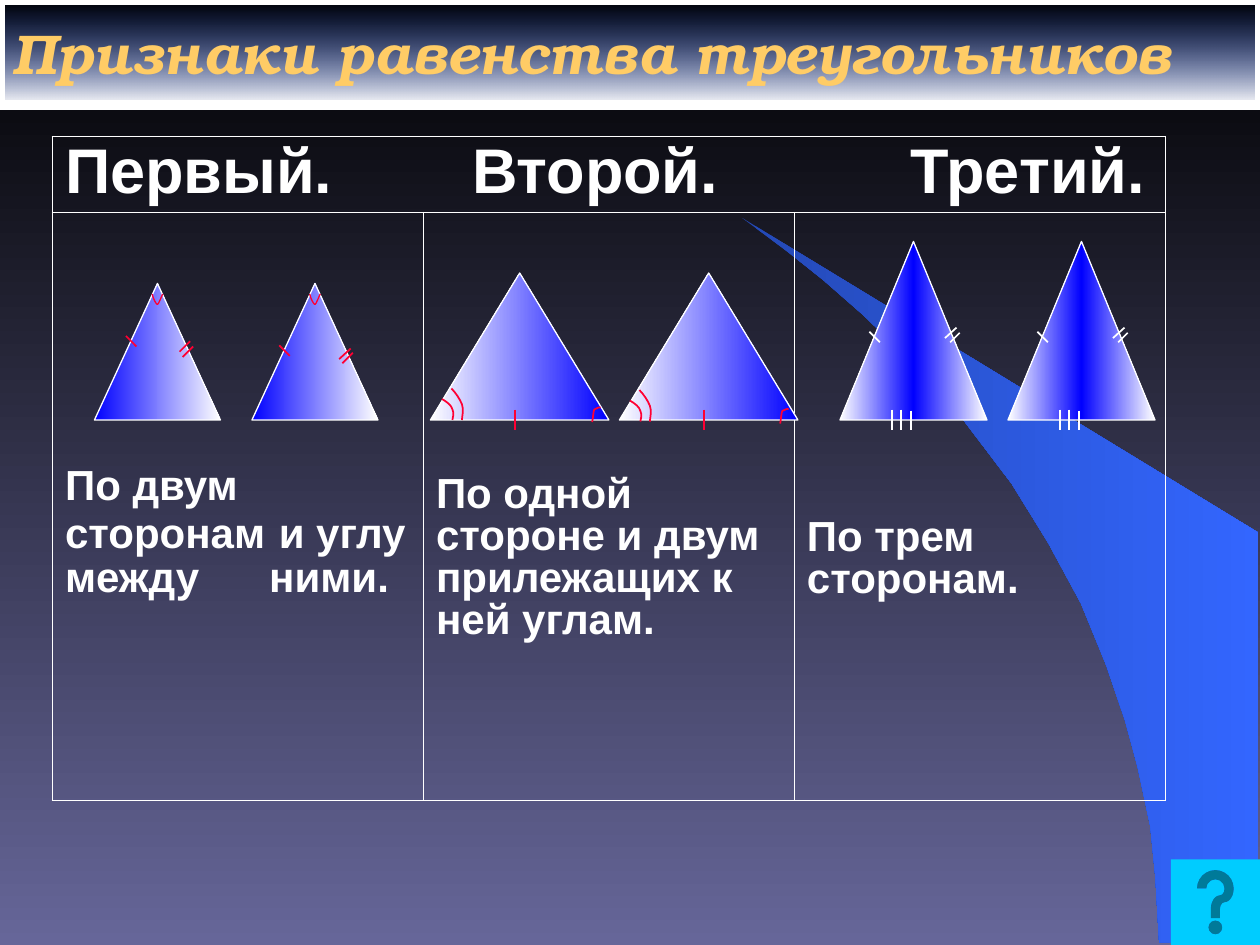
from dataclasses import dataclass

from lxml.etree import SubElement
from pptx import Presentation
from pptx.dml.color import RGBColor
from pptx.enum.shapes import MSO_CONNECTOR, MSO_SHAPE
from pptx.enum.text import MSO_ANCHOR, MSO_AUTO_SIZE, PP_ALIGN
from pptx.oxml.ns import qn
from pptx.util import Inches, Pt


@dataclass(frozen=True)
class Theme:
    white: str = "FFFFFF"
    night: str = "000000"
    dusk: str = "666699"
    gold: str = "FFCC66"
    blue: str = "0000FF"
    red: str = "FF0033"
    sweep_dark: str = "2449B6"
    sweep: str = "3366FF"
    button: str = "00CCFF"
    title_font: str = "TeX Gyre Bonum"
    body_font: str = "Arial"
    title_size: int = 32
    head_size: int = 36
    body_size: int = 24
    gap_size: int = 28


theme = Theme()
rgb = RGBColor.from_string

prs = Presentation()
prs.slide_width, prs.slide_height = Inches(10), Inches(7.5)
slide = prs.slides.add_slide(prs.slide_layouts[5])
shapes = slide.shapes

# The slide is a grid of 120 columns by 90 rows
unit = prs.slide_width / 120


def grid(*cells):
    return [round(cell * unit) for cell in cells]


def paint_gradient(fill, element, stops, angle=0):
    """Stops are (percent, colour) or (percent, colour, opacity percent)."""
    fill.gradient()
    fill.gradient_angle = angle
    stop_list = next(element.iter(qn("a:gsLst")))
    for old_stop in list(stop_list):
        stop_list.remove(old_stop)
    for percent, colour, *opacity in stops:
        stop = SubElement(stop_list, qn("a:gs"), pos=str(percent * 1000))
        tint = SubElement(stop, qn("a:srgbClr"), val=colour)
        for share in opacity:
            SubElement(tint, qn("a:alpha"), val=str(share * 1000))


# Background
paint_gradient(slide.background.fill, slide.element,
               [(0, theme.night), (100, theme.dusk)], angle=270)

# Title band
title = shapes.title
title.left, title.top, title.width, title.height = grid(0, 0, 120, 10)
paint_gradient(title.fill, title.element,
               [(0, theme.sweep, 0), (100, theme.white)], angle=270)
title.line.color.rgb = rgb(theme.white)
title.line.width = Pt(6)
frame = title.text_frame
frame.word_wrap = True
frame.auto_size = MSO_AUTO_SIZE.NONE
frame.vertical_anchor = MSO_ANCHOR.MIDDLE
frame.paragraphs[0].alignment = PP_ALIGN.LEFT
heading = frame.paragraphs[0].add_run()
heading.text = "Признаки равенства треугольников"
heading.font.name = theme.title_font
heading.font.size = Pt(theme.title_size)
heading.font.bold = heading.font.italic = True
heading.font.color.rgb = rgb(theme.gold)

# Blue sweep on the right, in inches
sweep_edge = [(9.99, 7.49), (9.99, 4.23), (5.89, 1.73), (6.24, 1.99), (6.53, 2.22),
              (6.85, 2.5), (7.16, 2.8), (7.62, 3.3), (8.03, 3.84), (8.32, 4.31),
              (8.58, 4.79), (8.78, 5.28), (8.93, 5.72), (9.03, 6.09), (9.13, 6.56),
              (9.17, 6.96)]
outline = shapes.build_freeform(Inches(9.2), Inches(7.48))
outline.add_line_segments([(Inches(x), Inches(y)) for x, y in sweep_edge], close=True)
sweep = outline.convert_to_shape()
sweep.shadow.inherit = False
sweep.line.fill.background()
paint_gradient(sweep.fill, sweep.element, [(0, theme.sweep_dark), (100, theme.sweep)])

# Table of the three criteria
table = shapes.add_table(2, 3, *grid(5, 13, 106, 63.2)).table
table.first_row = table.horz_banding = False
table.rows[0].height, table.rows[1].height = grid(7.2, 56)
for column in table.columns:
    column.width = round(106 * unit / 3)
table.cell(0, 0).merge(table.cell(0, 2))

# Per cell: row, column, top margin (inches), tab stops (inches), runs
body = theme.body_size
criteria = [
    (0, 0, 0.05, [3.23, 6.71], [("Первый.\tВторой.\tТретий.", theme.head_size)]),
    (1, 0, 2.02, [1.62], [("По двум сторонам", body), (" ", theme.gap_size),
                          ("и углу между\tними.", body)]),
    (1, 1, 2.08, [], [("По одной стороне и двум прилежащих к ней углам.", body)]),
    (1, 2, 2.42, [], [("По трем сторонам.", body)]),
]
for row, column, top_margin, tab_stops, runs in criteria:
    cell = table.cell(row, column)
    cell.margin_top = Inches(top_margin)
    cell.vertical_anchor = MSO_ANCHOR.TOP
    paragraph = cell.text_frame.paragraphs[0]
    paragraph.line_spacing = 0.9
    if tab_stops:
        tab_list = SubElement(paragraph._p.get_or_add_pPr(), qn("a:tabLst"))
        for stop in tab_stops:
            SubElement(tab_list, qn("a:tab"), pos=str(Inches(stop)), algn="l")
    for words, size in runs:
        run = paragraph.add_run()
        run.text = words
        run.font.name = theme.body_font
        run.font.size = Pt(size)
        run.font.bold = True
        run.font.color.rgb = rgb(theme.white)

# Thin white cell borders, no cell fill
for cell in table.iter_cells():
    cell.fill.background()
    properties = cell._tc.get_or_add_tcPr()
    for place, side in enumerate(("lnL", "lnR", "lnT", "lnB")):
        border = SubElement(properties, qn(f"a:{side}"), w=str(Pt(1)))
        SubElement(SubElement(border, qn("a:solidFill")), qn("a:srgbClr"), val=theme.white)
        properties.insert(place, border)

# Marks are in grid units from the triangle's top left corner;
# ticks are (x1, y1, x2, y2), arcs are the points of two joined Bezier curves
vertex_arc = [(5.5, 1), (5.6, 1.5), (5.9, 2), (6, 2), (6.1, 2), (6.4, 1.2), (6.5, 1)]
left_inner = [(1.1, 12), (1.6, 12.3), (2, 12.6), (2.1, 13), (2.3, 13.4), (2.1, 13.8), (2.1, 14)]
left_outer = [(2, 11), (2.4, 11.4), (2.8, 12), (3, 12.5), (3.2, 13), (3, 13.7), (3, 14)]
right_arc = [(15.4, 14.2), (15.5, 13.7), (15.5, 13.2), (15.6, 13), (15.8, 12.8),
             (16.2, 12.8), (16.2, 12.8)]
base_arcs = [left_inner, left_outer, right_arc]
base_tick = [(8.03, 13, 8.03, 15)]
three_sides = [(4.96, 16, 4.96, 18), (5.82, 16, 5.82, 18), (6.78, 16.1, 6.78, 18),
               (2.8, 8.6, 3.8, 9.6), (10, 9.2, 11.1, 8.2), (10.5, 9.6, 11.4, 8.7)]
to_white = [(0, theme.blue), (100, theme.white)]
to_blue = [(0, theme.white), (100, theme.blue)]
blue_middle = [(0, theme.white), (50, theme.blue), (100, theme.white)]

# Per triangle: box, gradient, mark colour, ticks, arcs, arc shift, arc width
triangles = [
    ((9, 27, 12, 13), to_white, theme.red,
     [(3, 5, 4, 6), (9.1, 5.5, 8.1, 6.5), (9.4, 6, 8.4, 7)], [vertex_arc], (0, 0), 0.75),
    ((24, 27, 12, 13), to_white, theme.red,
     [(2.6, 5.9, 3.6, 6.9), (9.4, 6.2, 8.3, 7.2), (9.6, 6.6, 8.6, 7.6)],
     [vertex_arc], (0, 0), 0.75),
    ((41, 26, 17, 14), to_blue, theme.red, base_tick, base_arcs, (0, 0), 1),
    ((59, 26, 17, 14), to_blue, theme.red, base_tick, base_arcs, (-0.1, 0.15), 1),
    ((80, 23, 14, 17), blue_middle, theme.white, three_sides, [], (0, 0), 1),
    ((96, 23, 14, 17), blue_middle, theme.white, three_sides, [], (0, 0), 1),
]
for box, stops, mark_colour, ticks, arcs, shift, arc_width in triangles:
    left, top = box[:2]
    triangle = shapes.add_shape(MSO_SHAPE.ISOSCELES_TRIANGLE, *grid(*box))
    triangle.shadow.inherit = False
    paint_gradient(triangle.fill, triangle.element, stops)
    triangle.line.color.rgb = rgb(theme.white)
    triangle.line.width = Pt(0.75)

    # Equal sides
    for x1, y1, x2, y2 in ticks:
        tick = shapes.add_connector(MSO_CONNECTOR.STRAIGHT,
                                    *grid(left + x1, top + y1, left + x2, top + y2))
        tick.line.color.rgb = rgb(mark_colour)
        tick.line.width = Pt(1)
        SubElement(tick.element.spPr, qn("a:effectLst"))

    # Equal angles: every three line segments become one Bezier curve
    for arc in arcs:
        points = [grid(left + shift[0] + x, top + shift[1] + y) for x, y in arc]
        outline = shapes.build_freeform(*points[0])
        outline.add_line_segments(points[1:], close=False)
        angle_mark = outline.convert_to_shape()
        segments = list(angle_mark.element.iter(qn("a:lnTo")))
        stroke = segments[0].getparent()
        for first in (0, 3):
            curve = SubElement(stroke, qn("a:cubicBezTo"))
            for segment in segments[first:first + 3]:
                curve.append(segment[0])
                stroke.remove(segment)
        angle_mark.shadow.inherit = False
        angle_mark.fill.background()
        angle_mark.line.color.rgb = rgb(mark_colour)
        angle_mark.line.width = Pt(arc_width)

# Help button in the corner
help_button = shapes.add_shape(MSO_SHAPE.ACTION_BUTTON_HELP, *grid(111.5, 81.85, 8.5, 8.15))
help_button.shadow.inherit = False
help_button.fill.solid()
help_button.fill.fore_color.rgb = rgb(theme.button)
help_button.line.fill.background()

prs.save("out.pptx")
